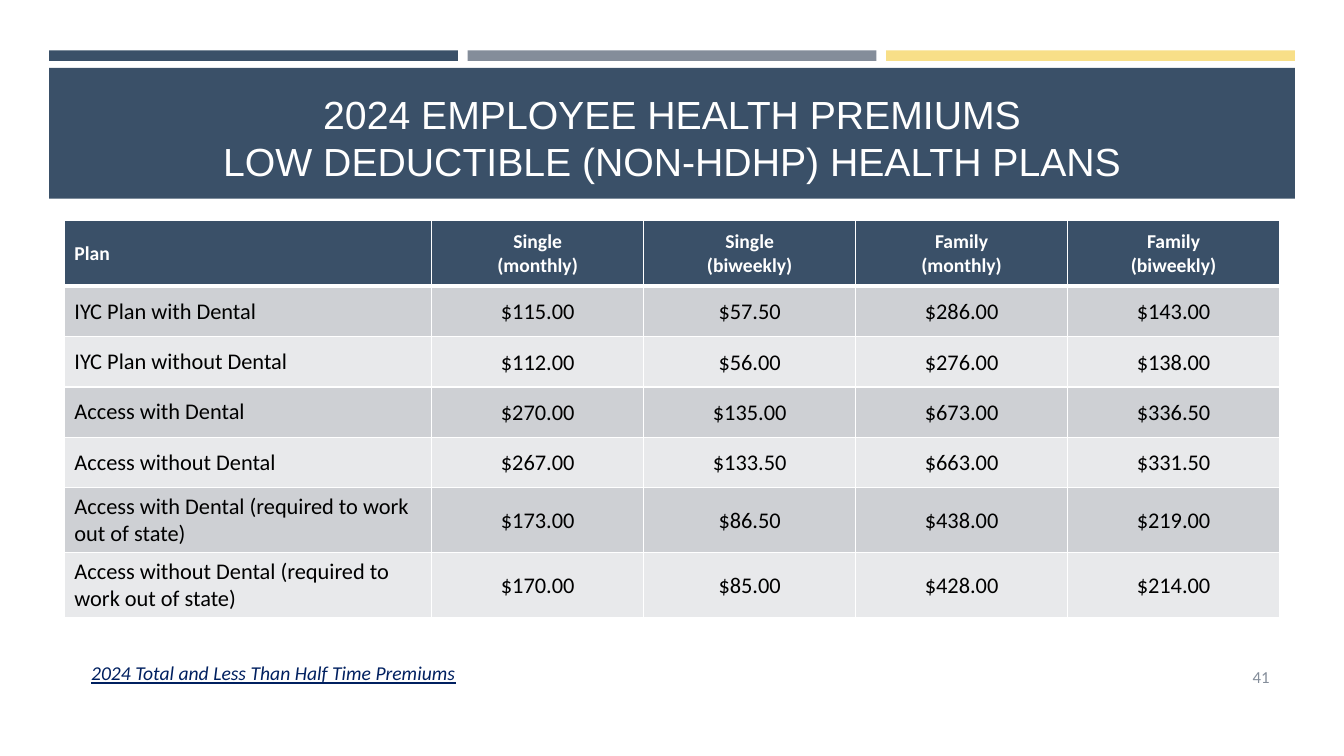
import dataclasses

import pptx
import pptx.dml.color
import pptx.enum.shapes
import pptx.enum.text
import pptx.oxml.ns
import pptx.util
from lxml import etree

Pt = pptx.util.Pt
RGB = pptx.dml.color.RGBColor.from_string
ALIGN = pptx.enum.text.PP_ALIGN
ANCHOR = pptx.enum.text.MSO_ANCHOR


@dataclasses.dataclass(frozen=True)
class Theme:
    navy: str = "3A5068"
    gray: str = "848D9A"
    yellow: str = "F8DF88"
    white: str = "FFFFFF"
    black: str = "000000"
    link: str = "002060"
    row_fills: tuple = ("CED0D4", "E8E9EB")
    title_font: str = "Arial"
    body_font: str = "Calibri"
    title_size: int = 28
    cell_size: int = 16
    header_size: int = 14
    link_size: int = 14
    number_size: int = 12


theme = Theme()


def format_text(text_frame, size, color, alignment, font_name=theme.body_font,
                bold=False, italic=False, underline=False):
    for paragraph in text_frame.paragraphs:
        paragraph.alignment = alignment
        for run in paragraph.runs:
            run.font.name = font_name
            run.font.size = Pt(size)
            run.font.bold = bold
            run.font.italic = italic
            run.font.underline = underline
            run.font.color.rgb = RGB(color)


def set_borders(cell, top, bottom):
    """Draw white borders; the side borders are 1 pt wide."""
    properties = cell._tc.get_or_add_tcPr()
    widths = {"a:lnL": 1, "a:lnR": 1, "a:lnT": top, "a:lnB": bottom}
    for index, (tag, width) in enumerate(widths.items()):
        line = etree.Element(pptx.oxml.ns.qn(tag), w=str(int(Pt(width))))
        fill = etree.SubElement(line, pptx.oxml.ns.qn("a:solidFill"))
        etree.SubElement(fill, pptx.oxml.ns.qn("a:srgbClr"), val=theme.white)
        properties.insert(index, line)


presentation = pptx.Presentation()
presentation.slide_width = Pt(960)
presentation.slide_height = Pt(540)
slide = presentation.slides.add_slide(presentation.slide_layouts[5])

# Colour bars and title band
bands = [(35 + 299 * index, 36, 292, 7.5, color)
         for index, color in enumerate((theme.navy, theme.gray, theme.yellow))]
bands.append((35, 48.5, 890, 93.5, theme.navy))
for left, top, width, height, color in bands:
    band = slide.shapes.add_shape(pptx.enum.shapes.MSO_SHAPE.RECTANGLE,
                                  Pt(left), Pt(top), Pt(width), Pt(height))
    band.shadow.inherit = False
    band.fill.solid()
    band.fill.fore_color.rgb = RGB(color)
    band.line.fill.background()

# Title, brought in front of its band
title = slide.shapes.title
title.element.getparent().append(title.element)
title.left, title.top, title.width, title.height = Pt(46), Pt(55.5), Pt(868), Pt(80)
title.text_frame.auto_size = pptx.enum.text.MSO_AUTO_SIZE.NONE
title.text_frame.word_wrap = True
title.text_frame.vertical_anchor = ANCHOR.BOTTOM
title.text_frame.paragraphs[0].text = (
    "2024 EMPLOYEE HEALTH PREMIUMS\nLOW DEDUCTIBLE (NON-HDHP) HEALTH PLANS")
format_text(title.text_frame, theme.title_size, theme.white, ALIGN.CENTER,
            theme.title_font)

# Premium table
premiums = [
    ("Plan", "Single\n(monthly)", "Single\n(biweekly)",
     "Family\n(monthly)", "Family\n(biweekly)"),
    ("IYC Plan with Dental", "$115.00", "$57.50", "$286.00", "$143.00"),
    ("IYC Plan without Dental", "$112.00", "$56.00", "$276.00", "$138.00"),
    ("Access with Dental", "$270.00", "$135.00", "$673.00", "$336.50"),
    ("Access without Dental", "$267.00", "$133.50", "$663.00", "$331.50"),
    ("Access with Dental (required to work out of state)",
     "$173.00", "$86.50", "$438.00", "$219.00"),
    ("Access without Dental (required to work out of state)",
     "$170.00", "$85.00", "$428.00", "$214.00"),
]
column_widths = [262.4] + [151.4] * 4
row_heights = [46.8] + [36] * 4 + [46] * 2
table = slide.shapes.add_table(len(row_heights), len(column_widths), Pt(46), Pt(157.7),
                               Pt(sum(column_widths)), Pt(sum(row_heights))).table
for column, width in zip(table.columns, column_widths):
    column.width = Pt(width)
for row, height in zip(table.rows, row_heights):
    row.height = Pt(height)

for row_index, values in enumerate(premiums):
    is_header = row_index == 0
    for column_index, value in enumerate(values):
        cell = table.cell(row_index, column_index)
        cell.text_frame.text = value
        cell.vertical_anchor = ANCHOR.MIDDLE
        cell.fill.solid()
        cell.fill.fore_color.rgb = RGB(
            theme.navy if is_header else theme.row_fills[(row_index - 1) % 2])
        set_borders(cell, top=3 if row_index == 1 else 1, bottom=3 if is_header else 1)
        if column_index and not is_header:
            cell.margin_left = cell.margin_top = cell.margin_right = Pt(0.7)
            cell.margin_bottom = Pt(0)
        format_text(cell.text_frame,
                    theme.header_size if is_header else theme.cell_size,
                    theme.white if is_header else theme.black,
                    ALIGN.CENTER if column_index else ALIGN.LEFT, bold=is_header)

# Footer
slide_number = slide.shapes.add_textbox(Pt(831.5), Pt(468.7), Pt(82.5), Pt(29))
slide_number.text_frame.word_wrap = True
slide_number.text_frame.vertical_anchor = ANCHOR.MIDDLE
slide_number.text_frame.text = "41"
format_text(slide_number.text_frame, theme.number_size, theme.gray, ALIGN.RIGHT)

premiums_link = slide.shapes.add_textbox(Pt(58), Pt(468.7), Pt(299.5), Pt(24.5))
premiums_link.text_frame.word_wrap = True
premiums_link.text_frame.text = "2024 Total and Less Than Half Time Premiums"
format_text(premiums_link.text_frame, theme.link_size, theme.link, ALIGN.LEFT,
            italic=True, underline=True)

presentation.save("out.pptx")
